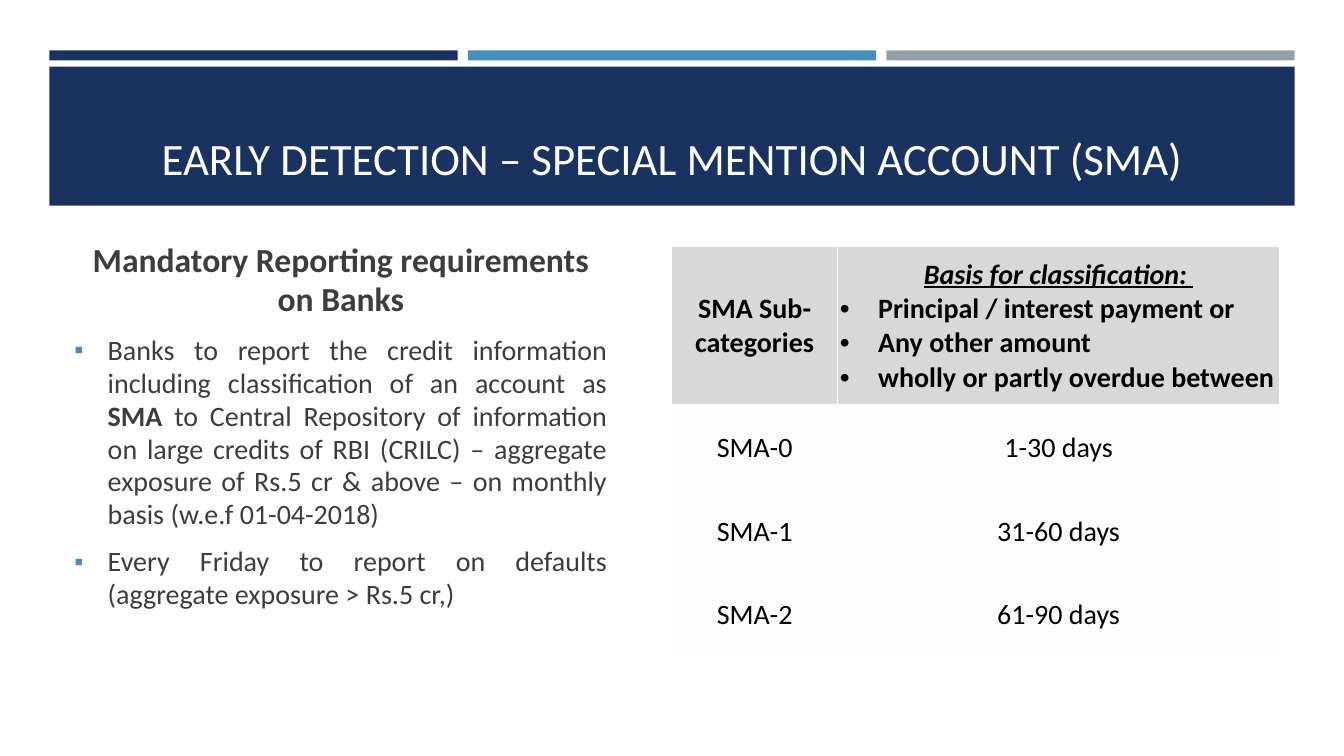
from dataclasses import dataclass

from lxml import etree
from pptx import Presentation
from pptx.dml.color import RGBColor
from pptx.enum.shapes import MSO_SHAPE
from pptx.enum.text import MSO_ANCHOR, PP_ALIGN
from pptx.oxml.ns import qn
from pptx.util import Inches, Pt

RECT = MSO_SHAPE.RECTANGLE
TOP, MIDDLE, BOTTOM = MSO_ANCHOR.TOP, MSO_ANCHOR.MIDDLE, MSO_ANCHOR.BOTTOM
LEFT, CENTER, JUSTIFY = PP_ALIGN.LEFT, PP_ALIGN.CENTER, PP_ALIGN.JUSTIFY


@dataclass(frozen=True)
class Theme:
    font: str = "Calibri"
    navy: str = "1A3260"
    blue: str = "4590B8"
    gray: str = "969FA7"
    white: str = "FFFFFF"
    black: str = "000000"
    ink: str = "3D3D3D"
    header_fill: str = "D8D8D8"
    row_fill: str = "FDFDFD"
    title_size: int = 32
    heading_size: int = 24
    text_size: int = 20


THEME = Theme()


@dataclass(frozen=True)
class Run:
    text: str
    bold: bool = False
    italic: bool = False
    underline: bool = False


@dataclass(frozen=True)
class Bullet:
    char: str
    indent: float
    color: str
    percent: int = 100


@dataclass(frozen=True)
class Para:
    runs: tuple[Run, ...]
    align: PP_ALIGN = CENTER
    size: int = THEME.text_size
    bullet: Bullet | None = None


@dataclass(frozen=True)
class Bar:
    left: float
    top: float
    width: float
    height: float
    color: str


SQUARE = Bullet("▪", 0.33, THEME.blue, 92)
DOT = Bullet("•", 0.38, THEME.black)

BARS = [Bar(0.49 + 4.15 * i, 0.5, 4.05, 0.1, color)
        for i, color in enumerate((THEME.navy, THEME.blue, THEME.gray))]
BARS.append(Bar(0.49, 0.66, 12.35, 1.38, THEME.navy))

TITLE = [Para((Run("EARLY DETECTION – SPECIAL MENTION ACCOUNT (SMA)"),), size=THEME.title_size)]
REPORTING = [
    Para((Run("Mandatory Reporting requirements on Banks", bold=True),), size=THEME.heading_size),
    Para((Run("Banks to report the credit information including classification of an account as "),
          Run("SMA", bold=True),
          Run(" to Central Repository of information on large credits of RBI (CRILC) – aggregate "
              "exposure of Rs.5 cr & above – on monthly basis (w.e.f 01-04-2018)")),
         JUSTIFY, bullet=SQUARE),
    Para((Run("Every Friday to report on defaults (aggregate exposure > Rs.5 cr,)"),),
         JUSTIFY, bullet=SQUARE),
]

BASIS = [Para((Run("Basis for classification:", True, True, True), Run(" ", True, False, True)))]
BASIS += [Para((Run(text, bold=True),), LEFT, bullet=DOT)
          for text in ("Principal / interest payment or", "Any other amount",
                       "wholly or partly overdue between")]
CATEGORIES = [("SMA-0", "1-30 days"), ("SMA-1", "31-60 days"), ("SMA-2", "61-90 days")]
TABLE_ROWS = [[[Para((Run("SMA Sub-categories", bold=True),))], BASIS]]
TABLE_ROWS += [[[Para((Run(text),))] for text in row] for row in CATEGORIES]
COLUMN_WIDTHS = (1.65, 4.38)
HEADER_HEIGHT, ROW_HEIGHT = 1.59, 0.83


def rgb(color: str) -> RGBColor:
    return RGBColor.from_string(color)


def add_bullet(p, bullet: Bullet) -> None:
    pPr = p._p.get_or_add_pPr()
    pPr.set("marL", str(Inches(bullet.indent)))
    pPr.set("indent", str(-Inches(bullet.indent)))
    color = etree.SubElement(pPr, qn("a:buClr"))
    etree.SubElement(color, qn("a:srgbClr"), val=bullet.color)
    etree.SubElement(pPr, qn("a:buSzPct"), val=str(bullet.percent * 1000))
    etree.SubElement(pPr, qn("a:buFont"), typeface="Arial")
    etree.SubElement(pPr, qn("a:buChar"), char=bullet.char)


def write(tf, paras: list[Para], color: str, before: int = 0, after: int = 0,
          spacing: float = 1.0) -> None:
    for i, para in enumerate(paras):
        p = tf.add_paragraph() if i else tf.paragraphs[0]
        if para.bullet:
            add_bullet(p, para.bullet)
        p.alignment = para.align
        p.line_spacing = spacing
        p.space_before = Pt(before if i else 0)
        p.space_after = Pt(after)
        for run in para.runs:
            r = p.add_run()
            r.text = run.text
            r.font.name = THEME.font
            r.font.size = Pt(para.size)
            r.font.bold = run.bold
            r.font.italic = run.italic
            r.font.underline = run.underline
            r.font.color.rgb = rgb(color)


def add_bar(s, bar: Bar) -> None:
    sp = s.shapes.add_shape(RECT, Inches(bar.left), Inches(bar.top),
                            Inches(bar.width), Inches(bar.height))
    sp.shadow.inherit = False
    sp.fill.solid()
    sp.fill.fore_color.rgb = rgb(bar.color)
    sp.line.fill.background()


def add_text_frame(s, left: float, top: float, width: float, height: float, anchor: MSO_ANCHOR):
    tf = s.shapes.add_textbox(Inches(left), Inches(top), Inches(width), Inches(height)).text_frame
    tf.word_wrap = True
    tf.vertical_anchor = anchor
    return tf


def add_borders(cell, bottom: int) -> None:
    """Draw white cell borders, 1 pt except for the given bottom width."""
    tcPr = cell._tc.get_or_add_tcPr()
    for side, width in (("L", 1), ("R", 1), ("T", 1), ("B", bottom)):
        ln = etree.SubElement(tcPr, qn(f"a:ln{side}"), w=str(Pt(width)))
        fill = etree.SubElement(ln, qn("a:solidFill"))
        etree.SubElement(fill, qn("a:srgbClr"), val=THEME.white)


def add_sma_table(s) -> None:
    heights = [HEADER_HEIGHT] + [ROW_HEIGHT] * len(CATEGORIES)
    table = s.shapes.add_table(len(heights), len(COLUMN_WIDTHS), Inches(6.66), Inches(2.44),
                               Inches(sum(COLUMN_WIDTHS)), Inches(sum(heights))).table
    for column, width in zip(table.columns, COLUMN_WIDTHS):
        column.width = Inches(width)
    for i, (row, height) in enumerate(zip(TABLE_ROWS, heights)):
        table.rows[i].height = Inches(height)
        for j, paras in enumerate(row):
            cell = table.cell(i, j)
            add_borders(cell, bottom=1 if i else 3)
            cell.fill.solid()
            cell.fill.fore_color.rgb = rgb(THEME.row_fill if i else THEME.header_fill)
            cell.vertical_anchor = MIDDLE
            cell.margin_left = cell.margin_right = Inches(0.02)
            cell.margin_top = cell.margin_bottom = 0
            write(cell.text_frame, paras, THEME.black)


def main() -> None:
    prs = Presentation()
    prs.slide_width, prs.slide_height = Inches(13.33), Inches(7.5)
    s = prs.slides.add_slide(prs.slide_layouts[6])
    for bar in BARS:
        add_bar(s, bar)
    write(add_text_frame(s, 0.64, 0.8, 12.06, 1.08, BOTTOM), TITLE, THEME.white)
    write(add_text_frame(s, 0.64, 2.34, 5.48, 3.97, TOP), REPORTING, THEME.ink,
          before=4, after=6, spacing=0.98)
    add_sma_table(s)
    prs.save("out.pptx")


if __name__ == "__main__":
    main()
